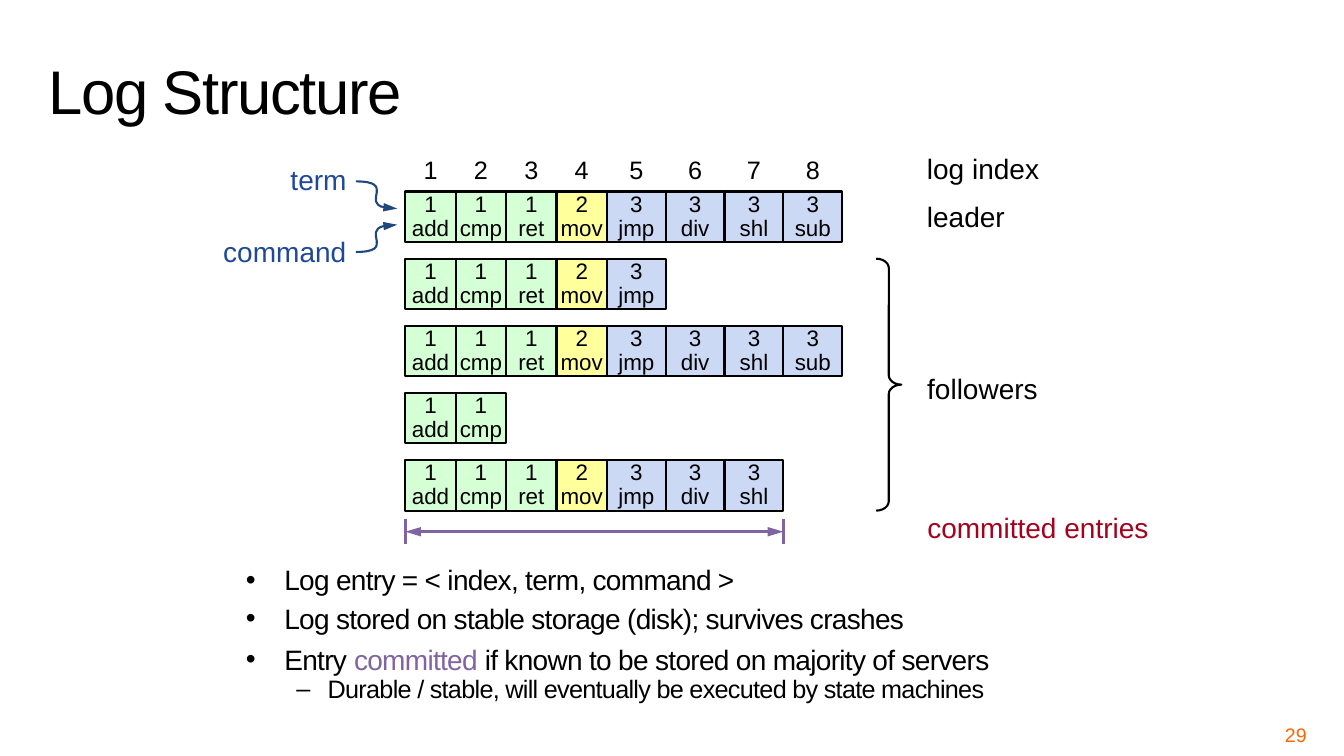
from lxml import etree
from pptx import Presentation
from pptx.dml.color import RGBColor
from pptx.enum.shapes import MSO_CONNECTOR, MSO_SHAPE
from pptx.enum.text import MSO_ANCHOR, PP_ALIGN
from pptx.oxml.ns import qn
from pptx.util import Inches, Pt

STRAIGHT = MSO_CONNECTOR.STRAIGHT
RECTANGLE, RIGHT_BRACE = MSO_SHAPE.RECTANGLE, MSO_SHAPE.RIGHT_BRACE
TOP, MIDDLE, BOTTOM = MSO_ANCHOR.TOP, MSO_ANCHOR.MIDDLE, MSO_ANCHOR.BOTTOM
LEFT, CENTER, RIGHT = PP_ALIGN.LEFT, PP_ALIGN.CENTER, PP_ALIGN.RIGHT

BLACK, BLUE, CURVE_BLUE = "000000", "1F4899", "1F497D"
PURPLE, RED, ORANGE = "8064A2", "A5001E", "FF6600"
TERM_FILLS = {1: "D5FFD5", 2: "FFFF9B", 3: "CCD9F4"}

ENTRIES = [(1, "add"), (1, "cmp"), (1, "ret"), (2, "mov"),
           (3, "jmp"), (3, "div"), (3, "shl"), (3, "sub")]
LOG_LENGTHS = [8, 5, 8, 2, 7]  # the leader, then four followers
COLUMN_WIDTHS = [0.5] * 4 + [7 / 12] * 4
ROW_HEIGHT, ROW_PITCH = 0.5, 2 / 3

BULLETS = [
    (0, ["Log entry = < index, term, command >"]),
    (0, ["Log stored on stable storage (disk); survives crashes"]),
    (0, ["Entry ", "committed", " if known to be stored on majority of servers"]),
    (1, ["Durable / stable, will eventually be executed by state machines"]),
]
# level: (bullet, size, left margin, hanging indent)
LEVELS = [("•", 20, 0.38, 0.38), ("–", 18, 0.81, 0.31)]
# (space before, space after) of each bullet
BULLET_GAPS = [(4, 4), (4, 4), (6, 0), (3, 0)]


def rgb(color):
    return RGBColor.from_string(color)


def style(para, size, color=BLACK, align=LEFT, spacing=0):
    """Set the paragraph's font; spacing is in points between letters."""
    para.alignment = align
    para.font.name = "Arial"
    para.font.size = Pt(size)
    para.font.color.rgb = rgb(color)
    if spacing:
        properties = para._p.get_or_add_pPr().get_or_add_defRPr()
        properties.set("spc", str(int(spacing * 100)))


def set_frame(frame, inset=None, anchor=TOP, wrap=True):
    frame.word_wrap = wrap
    frame.vertical_anchor = anchor
    if inset is not None:
        frame.margin_left = frame.margin_right = Inches(inset)
        frame.margin_top = frame.margin_bottom = Inches(inset)


def add_text(page, box, text, size, color=BLACK, align=CENTER, spacing=0, **frame_options):
    shape = page.shapes.add_textbox(*map(Inches, box))
    set_frame(shape.text_frame, **frame_options)
    para = shape.text_frame.paragraphs[0]
    para.text = text
    style(para, size, color, align, spacing)
    return para


def add_label(page, left, top, width, text, color=BLACK):
    add_text(page, (left, top, width, 0.34), text, 20, color, inset=0, wrap=False)


def set_line(shape, color, width, arrows=()):
    """Colour the line and put long arrowheads at the named ends."""
    shape.line.color.rgb = rgb(color)
    shape.line.width = Pt(width)
    for end in arrows:
        etree.SubElement(shape.line._get_or_add_ln(), qn(f"a:{end}"),
                         type="triangle", w="med", len="lg")


def add_title(page, box):
    para = add_text(page, box, "Log Structure", 44, align=LEFT, spacing=-1, anchor=BOTTOM)
    para.line_spacing = 0.8


def add_entry(page, box, term, command):
    cell = page.shapes.add_shape(RECTANGLE, *map(Inches, box))
    cell.shadow.inherit = False
    cell.fill.solid()
    cell.fill.fore_color.rgb = rgb(TERM_FILLS[term])
    set_line(cell, BLACK, 1.5)
    set_frame(cell.text_frame, inset=0, anchor=MIDDLE)
    para = cell.text_frame.paragraphs[0]
    para.text = f"{term}\v{command}"
    para.line_spacing = Pt(17)
    style(para, 16, align=CENTER)


def add_logs(page, left, top):
    """Index numbers above one row of entries per server."""
    lefts = [left + sum(COLUMN_WIDTHS[:column]) for column in range(len(ENTRIES))]
    for index, (x, width) in enumerate(zip(lefts, COLUMN_WIDTHS), start=1):
        add_text(page, (x, top - 0.42, width, 0.4), str(index), 18)
    for row, length in enumerate(LOG_LENGTHS):
        y = top + row * ROW_PITCH
        for x, width, entry in list(zip(lefts, COLUMN_WIDTHS, ENTRIES))[:length]:
            add_entry(page, (x, y, width, ROW_HEIGHT), *entry)


def add_committed_span(page, left, top, width, height):
    right, middle, bottom = left + width, top + height / 2, top + height
    group = page.shapes.add_group_shape()
    for ends, arrows in [((left, top, left, bottom), ()),
                         ((right, top, right, bottom), ()),
                         ((left, middle, right, middle), ("headEnd", "tailEnd"))]:
        line = group.shapes.add_connector(STRAIGHT, *map(Inches, ends))
        set_line(line, PURPLE, 2.25, arrows)
        etree.SubElement(line._element.spPr, qn("a:effectLst"))


def add_followers_brace(page, box):
    brace = page.shapes.add_shape(RIGHT_BRACE, *map(Inches, box))
    brace.shadow.inherit = False
    brace.adjustments[0] = 0.372
    brace.fill.background()
    set_line(brace, BLACK, 1.5)


def add_curved_arrow(page, *points):
    """Draw a Bézier arrow through a start, two controls and an end."""
    start, *others = [(Inches(x), Inches(y)) for x, y in points]
    builder = page.shapes.build_freeform(*start)
    builder.add_line_segments(others, close=False)
    arrow = builder.convert_to_shape()
    arrow.shadow.inherit = False
    arrow.fill.background()
    set_line(arrow, CURVE_BLUE, 1.5, ["tailEnd"])
    segments = list(arrow._element.iter(qn("a:lnTo")))
    outline = segments[0].getparent()
    curve = etree.SubElement(outline, qn("a:cubicBezTo"))
    for segment in segments:
        curve.append(segment[0])
        outline.remove(segment)


def add_callouts(page, left, top):
    """Labels for the two parts of a log entry, each with a curved arrow."""
    add_label(page, left + 0.67, top, 0.56, "term", BLUE)
    add_label(page, left, top + 0.72, 1.23, "command", BLUE)
    x = left + 1.32
    for first, last in [(top + 0.19, top + 0.46), (top + 0.89, top + 0.62)]:
        add_curved_arrow(page, (x, first), (x + 0.4, first),
                         (x - 0.04, last), (x + 0.41, last))


def add_side_labels(page, left):
    for top, width, text, color in [(1.5, 1.12, "log index", BLACK),
                                    (1.98, 0.78, "leader", BLACK),
                                    (3.69, 1.11, "followers", BLACK),
                                    (5.06, 2.21, "committed entries", RED)]:
        add_label(page, left, top, width, text, color)


def add_bullets(page, box):
    frame = page.shapes.add_textbox(*map(Inches, box)).text_frame
    set_frame(frame, inset=0.04)
    for number, ((level, texts), (before, after)) in enumerate(zip(BULLETS, BULLET_GAPS)):
        para = frame.add_paragraph() if number else frame.paragraphs[0]
        mark, size, margin, hanging = LEVELS[level]
        para.level = level
        properties = para._p.get_or_add_pPr()
        properties.set("marL", str(Inches(margin)))
        properties.set("indent", str(-Inches(hanging)))
        etree.SubElement(properties, qn("a:buFont"), typeface="Arial")
        etree.SubElement(properties, qn("a:buChar"), char=mark)
        para.line_spacing = 0.8
        para.space_before, para.space_after = Pt(before), Pt(after)
        style(para, size, spacing=-0.5)
        for text in texts:
            span = para.add_run()
            span.text = text
            if text == "committed":
                span.font.color.rgb = rgb(PURPLE)


def build_log_slide(deck):
    page = deck.slides.add_slide(deck.slide_layouts[6])
    left, top = 4.02, 1.9
    add_title(page, (0.38, 0.13, 12.62, 1.17))
    add_logs(page, left, top)
    add_callouts(page, 2.21, 1.61)
    add_followers_brace(page, (8.69, top + ROW_PITCH, 0.25, 2.5))
    add_committed_span(page, left, 5.15, sum(COLUMN_WIDTHS[:7]), 0.25)
    add_side_labels(page, 9.19)
    add_bullets(page, (2.4, 5.61, 9, 1.73))
    add_text(page, (9.89, 7.17, 3.11, 0.23), "29", 14, ORANGE, RIGHT, inset=0.04, anchor=MIDDLE)


def main():
    deck = Presentation()
    deck.slide_width, deck.slide_height = Inches(13.33), Inches(7.5)
    build_log_slide(deck)
    deck.save("out.pptx")


if __name__ == "__main__":
    main()
